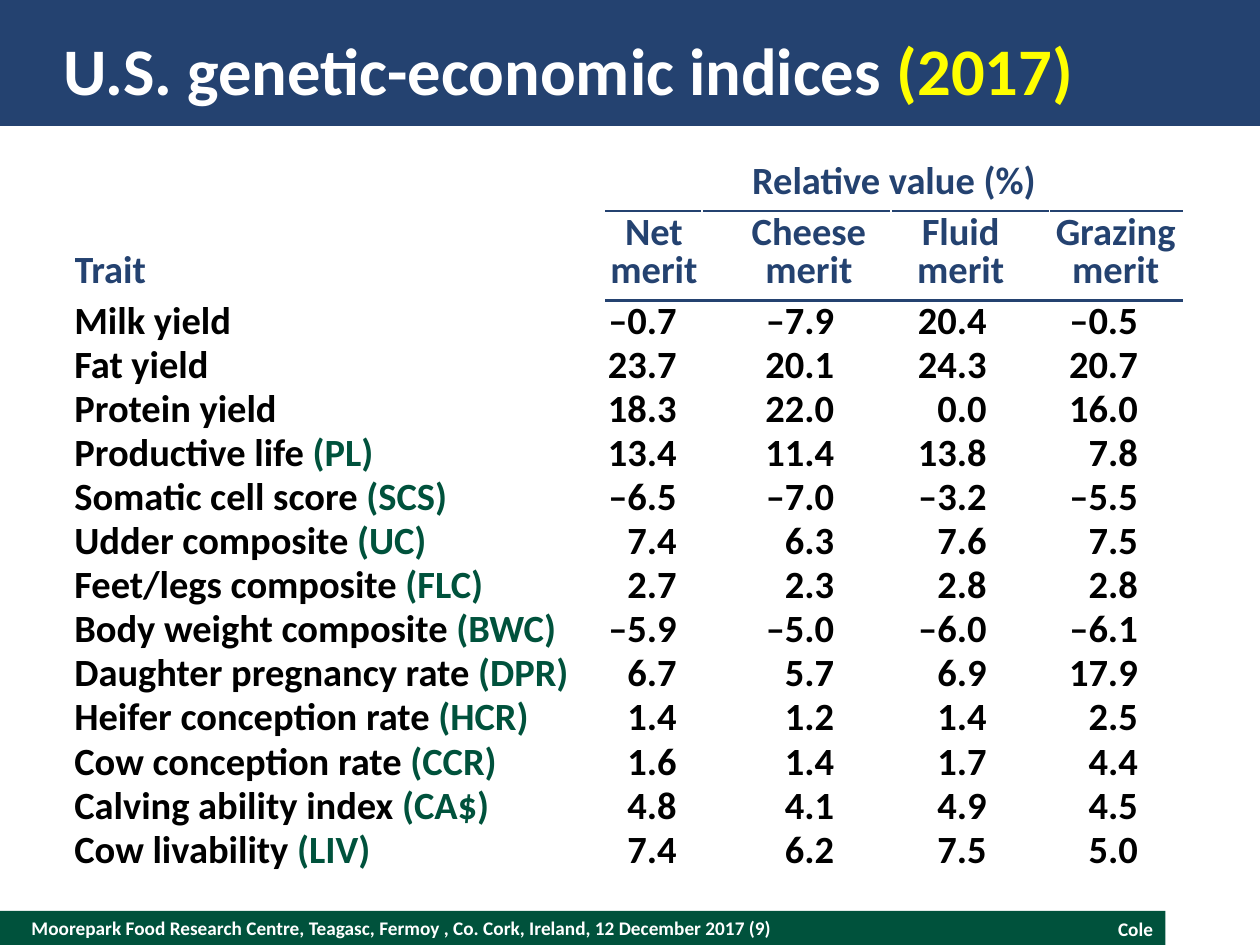
from lxml import etree
from pptx import Presentation
from pptx.dml.color import RGBColor
from pptx.enum.shapes import MSO_SHAPE as Shape
from pptx.enum.text import MSO_ANCHOR as Anchor, MSO_AUTO_SIZE as AutoSize, PP_ALIGN as Align
from pptx.oxml.ns import qn
from pptx.util import Inches, Pt

COLORS = {"navy": "244270", "green": "00523C", "white": "FFFFFF",
          "yellow": "FFFF00", "black": "000000"}
FONT = "Calibri"
COLUMN_WIDTHS = [4.22, 0.76, 1.5, 1.26, 1.05]
HEADINGS = ["Net merit", "Cheese\nmerit", "Fluid\nmerit", "Grazing\vmerit"]
# Left, top, right and bottom margins of each value column
HEADING_MARGINS = [(0, 0.05, 0, 0.05), (0.2, 0.05, 0, 0.05),
                   (0, 0.05, 0.15, 0.05), (0, 0.05, 0, 0.05)]
VALUE_MARGINS = [(0, 0, 0.2, 0), (0.1, 0, 0.45, 0), (0, 0, 0.5, 0), (0, 0, 0.35, 0)]
NO_MARGINS = (0, 0, 0, 0)
TRAITS = [
    ("Milk yield", "", "–0.7", "–7.9", "20.4", "–0.5"),
    ("Fat yield", "", "23.7", "20.1", "24.3", "20.7"),
    ("Protein yield", "", "18.3", "22.0", "0.0", "16.0"),
    ("Productive life", " (PL)", "13.4", "11.4", "13.8", "7.8"),
    ("Somatic cell score", " (SCS)", "–6.5", "–7.0", "–3.2", "–5.5"),
    ("Udder composite", " (UC)", "7.4", "6.3", "7.6", "7.5"),
    ("Feet/legs composite", " (FLC)", "2.7", "2.3", "2.8", "2.8"),
    ("Body weight composite", " (BWC)", "–5.9", "–5.0", "–6.0", "–6.1"),
    ("Daughter pregnancy rate", " (DPR)", "6.7", "5.7", "6.9", "17.9"),
    ("Heifer conception rate", " (HCR)", "1.4", "1.2", "1.4", "2.5"),
    ("Cow conception rate", " (CCR)", "1.6", "1.4", "1.7", "4.4"),
    ("Calving ability index", " (CA$)", "4.8", "4.1", "4.9", "4.5"),
    ("Cow livability", " (LIV)", "7.4", "6.2", "7.5", "5.0"),
]


def rgb(name):
    return RGBColor.from_string(COLORS[name])


def format_run(run, size, color):
    run.font.name = FONT
    run.font.size = Pt(size)
    run.font.bold = True
    run.font.color.rgb = rgb(color)


def format_text(text_frame, size, color, align=Align.LEFT, spacing=None):
    for paragraph in text_frame.paragraphs:
        paragraph.alignment = align
        if spacing:
            paragraph.line_spacing = Pt(spacing)
        for run in paragraph.runs:
            format_run(run, size, color)


def set_margins(target, margins):
    (target.margin_left, target.margin_top,
     target.margin_right, target.margin_bottom) = map(Inches, margins)


def add_band(slide, left, top, width, height, color):
    """Add a plain bar behind the title."""
    band = slide.shapes.add_shape(Shape.RECTANGLE, *map(Inches, (left, top, width, height)))
    band.shadow.inherit = False
    band.fill.solid()
    band.fill.fore_color.rgb = rgb(color)
    band.line.fill.background()
    slide.shapes.title.element.addprevious(band.element)


def add_footer_text(slide, text, box, align, margins, anchor):
    shape = slide.shapes.add_textbox(*map(Inches, box))
    text_frame = shape.text_frame
    text_frame.word_wrap = True
    text_frame.vertical_anchor = anchor
    set_margins(text_frame, margins)
    text_frame.text = text
    format_text(text_frame, 11, "white", align)


def set_title(slide):
    title = slide.shapes.title
    title.left, title.top, title.width, title.height = map(Inches, (0.5, 0.2, 9, 0.7))
    text_frame = title.text_frame
    text_frame.auto_size = AutoSize.NONE
    text_frame.vertical_anchor = Anchor.MIDDLE
    set_margins(text_frame, NO_MARGINS)
    text_frame.text = "U.S. genetic-economic indices "
    format_text(text_frame, 38, "white")
    year = text_frame.paragraphs[0].add_run()
    year.text = "(2017)"
    format_run(year, 38, "yellow")


def fill_cell(cell, text, margins, color, align, spacing, anchor=Anchor.TOP):
    cell.text = text
    cell.vertical_anchor = anchor
    set_margins(cell, margins)
    format_text(cell.text_frame, 22, color, align, spacing)


def add_border(cell, side):
    """Draw a navy line on one side of a cell: T or B."""
    properties = cell._tc.get_or_add_tcPr()
    line = etree.Element(qn(f"a:ln{side}"), w=str(Pt(1.5)))
    fill = etree.SubElement(line, qn("a:solidFill"))
    etree.SubElement(fill, qn("a:srgbClr"), val=COLORS["navy"])
    properties.insert(0, line)


def fill_header(table):
    bottom = Anchor.BOTTOM
    table.cell(0, 0).merge(table.cell(1, 0))
    table.cell(0, 1).merge(table.cell(0, 4))
    fill_cell(table.cell(0, 0), "Trait", (0, 0, 0, 0.05), "navy", Align.LEFT, 24, bottom)
    fill_cell(table.cell(0, 1), "Relative value (%)", (0, 0, 0, 0.05), "navy",
              Align.CENTER, 24, bottom)
    for column, (heading, margins) in enumerate(zip(HEADINGS, HEADING_MARGINS), 1):
        fill_cell(table.cell(1, column), heading, margins, "navy", Align.CENTER, 22, bottom)
        add_border(table.cell(0, column), "B")
        add_border(table.cell(1, column), "T")


def add_index_table(slide):
    row_heights = [0.38, 0.71] + [0.35] * len(TRAITS)
    frame = slide.shapes.add_table(len(row_heights), len(COLUMN_WIDTHS), Inches(0.59),
                                   Inches(1.29), Inches(8.79), Inches(5.61))
    table = frame.table
    table.first_row = table.horz_banding = False
    for column, width in zip(table.columns, COLUMN_WIDTHS):
        column.width = Inches(width)
    for row, height in zip(table.rows, row_heights):
        row.height = Inches(height)
    for cell in table.iter_cells():
        cell.fill.background()
    fill_header(table)
    for row, (trait, abbreviation, *values) in enumerate(TRAITS, 2):
        label = table.cell(row, 0)
        fill_cell(label, trait, NO_MARGINS, "black", Align.LEFT, 25)
        if abbreviation:
            run = label.text_frame.paragraphs[0].add_run()
            run.text = abbreviation
            format_run(run, 22, "green")
        for column, (value, margins) in enumerate(zip(values, VALUE_MARGINS), 1):
            fill_cell(table.cell(row, column), value, margins, "black", Align.RIGHT, 25)


def main():
    presentation = Presentation()
    presentation.slide_width, presentation.slide_height = Inches(10), Inches(7.5)
    slide = presentation.slides.add_slide(presentation.slide_layouts[5])
    add_band(slide, 0, 7.23, 9.25, 0.27, "green")
    add_band(slide, 0, 0, 10, 1, "navy")
    set_title(slide)
    add_footer_text(
        slide,
        "Moorepark Food Research Centre, Teagasc, Fermoy , Co. Cork, Ireland, 12 December 2017 (9)",
        (0.25, 7.23, 6.5, 0.27), Align.LEFT, NO_MARGINS, Anchor.MIDDLE)
    add_footer_text(slide, "Cole", (7.25, 7.23, 2, 0.29), Align.RIGHT,
                    (0.1, 0.05, 0.1, 0.05), Anchor.TOP)
    add_index_table(slide)
    presentation.save("out.pptx")


if __name__ == "__main__":
    main()
